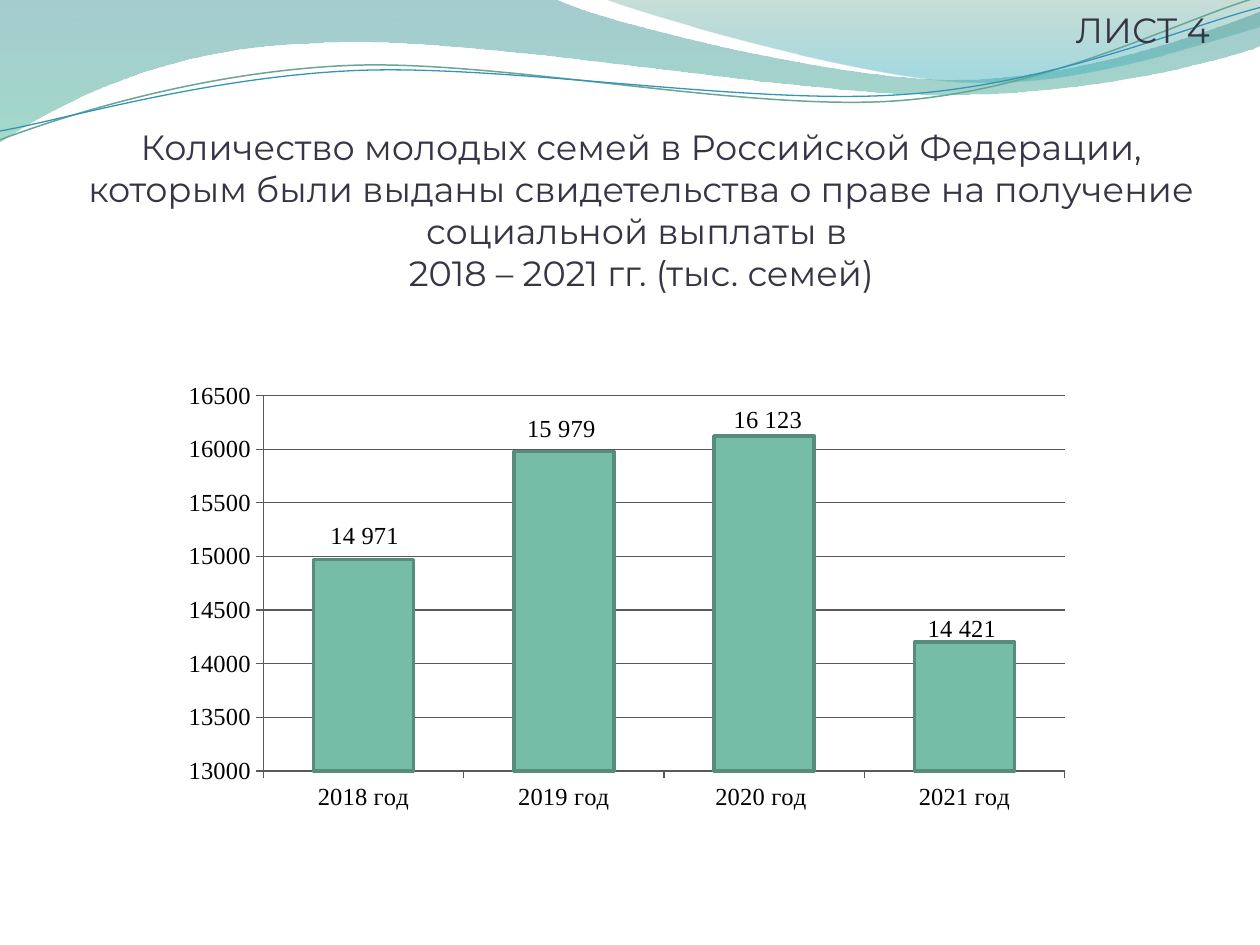
from dataclasses import dataclass

import pptx
import pptx.chart.data
import pptx.dml.color
import pptx.enum.chart
import pptx.enum.text
import pptx.oxml
import pptx.oxml.ns
import pptx.util
from pptx.oxml.ns import qn
from pptx.util import Inches


@dataclass(frozen=True)
class Theme:
    heading_font: str = "Montserrat"
    chart_font: str = "Times New Roman"
    heading_size: int = 20
    chart_size: int = 14
    heading: str = "373545"
    chart_text: str = "000000"
    axis: str = "595959"
    bar: str = "75BDA7"
    bar_edge: str = "578C7C"
    # Gradient stops: position, colour, opacity in percent
    wide_wave: tuple = ((0, "398D96", 45), (1, "58BD9F", 55))
    right_wave: tuple = ((0, "4F947F", 30), (0.8, "3BAFBC", 45))
    green_line: str = "67A793"
    blue_line: str = "3494BA"


THEME = Theme()

# Each outline is a start point and steps of one point (line) or three (Bezier curve)
WIDE_WAVE = [
    (0, 0), [(4.4, -0.01)],
    [(4.76, 0.17), (6.64, 0.63), (7.58, 0.63)],
    [(8.53, 0.63), (9.58, 0.26), (10, 0.09)], [(10.01, 0.36)],
    [(9.83, 0.44), (8.7, 0.76), (7.46, 0.75)],
    [(6.22, 0.75), (3.82, 0.28), (2.57, 0.34)],
    [(1.29, 0.36), (0.46, 0.83), (-0.01, 1.13)], [(0, 0)],
]
RIGHT_WAVE = [
    (4.79, -0.01),
    [(5.09, 0.11), (6.82, 0.62), (7.69, 0.65)],
    [(8.56, 0.69), (9.61, 0.32), (10, 0.21)], [(10, 0)], [(4.79, -0.01)],
]
GREEN_LINE = [
    (0, 1.11),
    [(0.48, 0.93), (1.58, 0.57), (2.77, 0.52)],
    [(3.95, 0.47), (5.93, 0.89), (7.13, 0.8)],
    [(8.33, 0.71), (9.38, 0.15), (9.98, -0.02)],
]
BLUE_LINE = [
    (0, 1.04),
    [(0.47, 0.96), (1.64, 0.61), (2.83, 0.56)],
    [(4.03, 0.51), (5.97, 0.84), (7.17, 0.75)],
    [(8.36, 0.67), (9.41, 0.21), (10, 0.06)],
]

# Category, value, label, shift of the label from the middle of its bar in inches
FAMILIES = [
    ("2018 год", 14971, "14 971", (0.01, -1.03)),
    ("2019 год", 15978, "15 979", (-0.02, -1.45)),
    ("2020 год ", 16123, "16 123", (0.03, -1.46)),
    ("2021 год", 14200, "14 421", (-0.02, -0.62)),
]


def rgb(value):
    return pptx.dml.color.RGBColor.from_string(value)


def write_text(frame, text, *, font=THEME.heading_font, size=THEME.heading_size,
               color=THEME.heading):
    para = frame.paragraphs[0]
    para.text = text
    para.alignment = pptx.enum.text.PP_ALIGN.CENTER
    for span in para.runs:
        span.font.name = font
        span.font.size = pptx.util.Pt(size)
        span.font.color.rgb = rgb(color)


def set_heading(shape, box, text):
    shape.left, shape.top, shape.width, shape.height = map(Inches, box)
    frame = shape.text_frame
    frame.word_wrap = True
    frame.auto_size = pptx.enum.text.MSO_AUTO_SIZE.NONE
    frame.vertical_anchor = pptx.enum.text.MSO_ANCHOR.BOTTOM
    frame.margin_left = frame.margin_right = frame.margin_bottom = 0
    frame.margin_top = Inches(0.05)
    write_text(frame, text)


def add_outline(page, box, outline, closed):
    """Draw all points as a polygon, then join each three-point step into one curve."""
    start, *steps = outline
    points = [(Inches(box[0] + x), Inches(box[1] + y))
              for x, y in [start, *(point for step in steps for point in step)]]
    builder = page.shapes.build_freeform(*points[0])
    builder.add_line_segments(points[1:], close=closed)
    shape = builder.convert_to_shape()
    shape.shadow.inherit = False
    lines = iter(list(shape.element.spPr.iter(qn("a:lnTo"))))
    for step in steps:
        corners = [next(lines) for _ in step]
        if len(corners) == 3:
            curve = corners[0].makeelement(qn("a:cubicBezTo"), {})
            corners[0].addprevious(curve)
            for corner in corners:
                curve.append(corner[0])
                corner.getparent().remove(corner)
    return shape


def add_wave(page, box, outline, stops):
    shape = add_outline(page, box, outline, True)
    shape.line.fill.background()
    shape.fill.gradient()
    shape.fill.gradient_angle = 270
    for stop, (position, color, _) in zip(shape.fill.gradient_stops, stops):
        stop.position = position
        stop.color.rgb = rgb(color)
    for node, (_, _, opacity) in zip(shape.element.spPr.iter(qn("a:srgbClr")), stops):
        node.append(node.makeelement(qn("a:alpha"), {"val": str(opacity * 1000)}))


def add_curve(page, box, outline, color, width):
    shape = add_outline(page, box, outline, False)
    shape.fill.background()
    shape.line.color.rgb = rgb(color)
    shape.line.width = pptx.util.Pt(width)


def add_banner(page, box):
    add_wave(page, box, WIDE_WAVE, THEME.wide_wave)
    add_wave(page, box, RIGHT_WAVE, THEME.right_wave)
    add_curve(page, box, GREEN_LINE, THEME.green_line, 0.85)
    add_curve(page, box, BLUE_LINE, THEME.blue_line, 0.75)


def manual_layout(**values):
    parts = "".join(f'<c:{name} val="{value}"/>' for name, value in values.items())
    return pptx.oxml.parse_xml(
        f'<c:layout {pptx.oxml.ns.nsdecls("c")}><c:manualLayout>{parts}'
        "</c:manualLayout></c:layout>")


def label_bars(series, width, height):
    labels = series.data_labels
    labels.show_value = True
    for index, (_, _, text, _) in enumerate(FAMILIES):
        write_text(series.points[index].data_label.text_frame, text, font=THEME.chart_font,
                   size=THEME.chart_size, color=THEME.chart_text)
    for node, (_, _, _, (x, y)) in zip(labels._element.findall(qn("c:dLbl")), FAMILIES):
        node.find(qn("c:idx")).addnext(manual_layout(x=x / width, y=y / height))
    for leader in labels._element.findall(qn("c:showLeaderLines")):
        leader.set("val", "0")
    labels._element.append(pptx.oxml.parse_xml(
        f'<c:extLst {pptx.oxml.ns.nsdecls("c")}>'
        '<c:ext uri="{CE6537A1-D6FC-4f65-9D91-7224C49458BB}" '
        'xmlns:c15="http://schemas.microsoft.com/office/drawing/2012/chart">'
        '<c15:showLeaderLines val="0"/></c:ext></c:extLst>'))


def add_families_chart(page, box):
    data = pptx.chart.data.CategoryChartData()
    data.categories = [row[0] for row in FAMILIES]
    data.add_series("Series 1", [row[1] for row in FAMILIES])
    chart = page.shapes.add_chart(
        pptx.enum.chart.XL_CHART_TYPE.COLUMN_STACKED, *map(Inches, box), data).chart
    chart.has_title = chart.has_legend = False
    chart.font.name = THEME.chart_font
    chart.font.size = pptx.util.Pt(THEME.chart_size)
    chart.font.color.rgb = rgb(THEME.chart_text)

    plot = chart.plots[0]
    plot.gap_width, plot.overlap, plot.vary_by_categories = 100, 100, False
    series = plot.series[0]
    series.format.fill.solid()
    series.format.fill.fore_color.rgb = rgb(THEME.bar)
    series.format.line.color.rgb = rgb(THEME.bar_edge)
    series.format.line.width = pptx.util.Pt(2)
    width, height = box[2:]
    label_bars(series, width, height)

    values = chart.value_axis
    values.minimum_scale, values.maximum_scale, values.major_unit = 13000, 16500, 500
    values.has_major_gridlines = True
    for axis in (values, chart.category_axis):
        axis.major_tick_mark = pptx.enum.chart.XL_TICK_MARK.OUTSIDE
    for part in (values, values.major_gridlines, chart.category_axis):
        part.format.line.color.rgb = rgb(THEME.axis)
        part.format.line.width = pptx.util.Pt(0.75)

    area = chart._chartSpace.chart.plotArea
    for old in area.findall(qn("c:layout")):
        area.remove(old)
    area.insert(0, manual_layout(layoutTarget="inner", xMode="edge", yMode="edge",
                                 x=0.74 / width, y=0.18 / height,
                                 w=6.36 / width, h=2.98 / height))


def main():
    deck = pptx.Presentation()
    deck.slide_width, deck.slide_height = Inches(10), Inches(7.5)
    page = deck.slides.add_slide(deck.slide_layouts[5])
    title = page.shapes.title
    add_banner(page, (0, 0, 10, 1.13))
    page.shapes[-1].element.addnext(title.element)
    set_heading(title, (0.59, 1.95, 9, 0.38),
                "Количество молодых семей в Российской Федерации, которым были выданы "
                "свидетельства о праве на получение социальной выплаты в "
                "\v2018 – 2021 гг. (тыс. семей)")
    add_families_chart(page, (1.35, 2.96, 7.24, 3.54))
    set_heading(page.shapes.add_textbox(0, 0, 0, 0), (8.17, 0.01, 1.8, 0.39), "ЛИСТ 4")
    deck.save("out.pptx")


if __name__ == "__main__":
    main()
